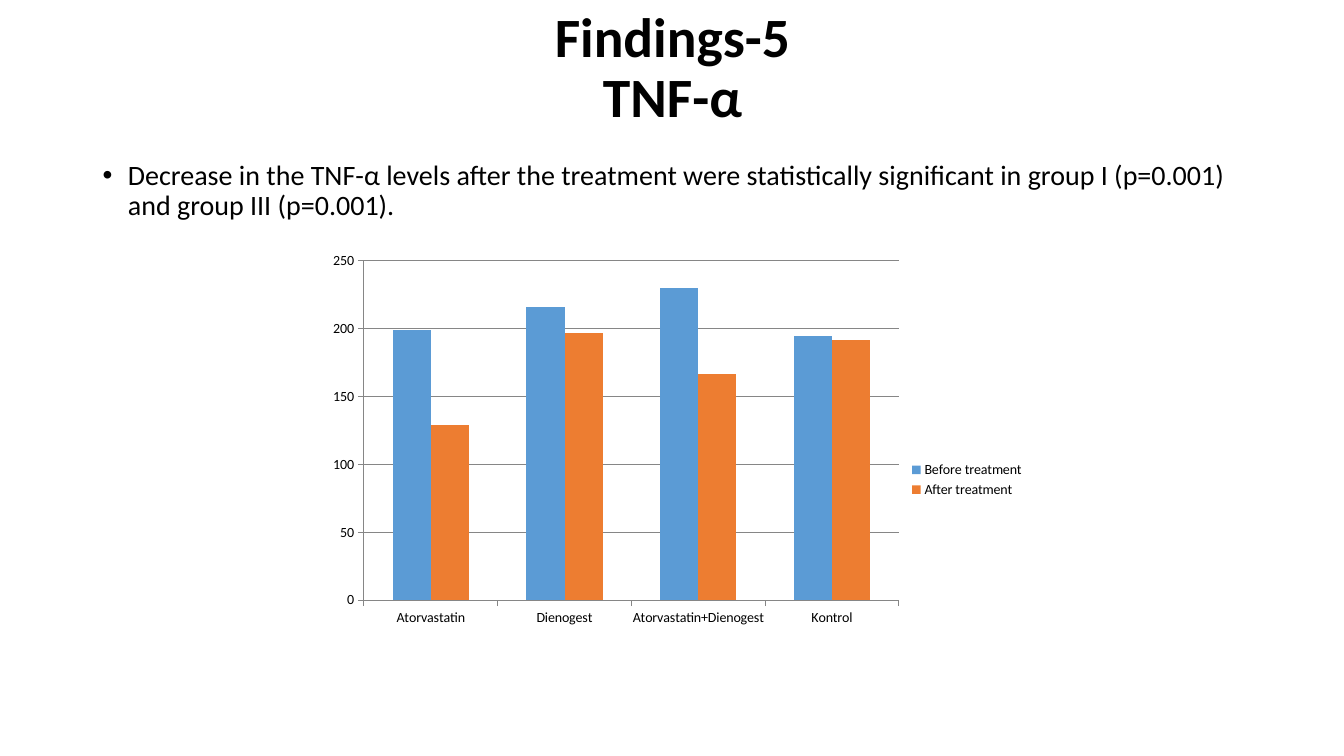
import pptx
import pptx.chart.data
import pptx.dml.color
import pptx.enum.chart
import pptx.enum.text
import pptx.oxml
import pptx.oxml.ns
import pptx.util
from pptx.util import Inches


def color(hex_string):
    return pptx.dml.color.RGBColor.from_string(hex_string)


class SlideBuilder:
    font_name = "Calibri"
    text_color = "000000"
    line_color = "868686"

    def __init__(self, presentation):
        self.slide = presentation.slides.add_slide(presentation.slide_layouts[5])

    def style_font(self, font, size, bold=False):
        font.name = self.font_name
        font.size = pptx.util.Pt(size)
        font.bold = bold
        font.color.rgb = color(self.text_color)

    def style_paragraph(self, paragraph, size, alignment, bold=False):
        paragraph.alignment = alignment
        paragraph.line_spacing = 0.9
        for run in paragraph.runs:
            self.style_font(run.font, size, bold)

    def title(self, text, left, top, width, height):
        shape = self.slide.shapes.title
        shape.left, shape.top = Inches(left), Inches(top)
        shape.width, shape.height = Inches(width), Inches(height)
        frame = shape.text_frame
        frame.text = text
        frame.auto_size = pptx.enum.text.MSO_AUTO_SIZE.NONE
        frame.vertical_anchor = pptx.enum.text.MSO_ANCHOR.MIDDLE
        self.style_paragraph(frame.paragraphs[0], 39.6, pptx.enum.text.PP_ALIGN.CENTER, True)

    def bullet_text(self, text, left, top, width, height):
        shape = self.slide.shapes.add_textbox(
            Inches(left), Inches(top), Inches(width), Inches(height))
        frame = shape.text_frame
        frame.word_wrap = True
        frame.text = text
        paragraph = frame.paragraphs[0]
        self.style_paragraph(paragraph, 20, pptx.enum.text.PP_ALIGN.LEFT)
        paragraph.space_before = pptx.util.Pt(10)
        properties = paragraph._p.get_or_add_pPr()
        properties.set("marL", str(Inches(0.25)))
        properties.set("indent", str(-Inches(0.25)))
        namespace = pptx.oxml.ns.nsdecls("a")
        properties.append(pptx.oxml.parse_xml(f'<a:buFont {namespace} typeface="Arial"/>'))
        properties.append(pptx.oxml.parse_xml(f'<a:buChar {namespace} char="•"/>'))

    def column_chart(self, categories, series_rows, left, top, width, height, plot_area):
        data = pptx.chart.data.CategoryChartData()
        data.categories = categories
        for name, values, _ in series_rows:
            data.add_series(name, values)
        chart = self.slide.shapes.add_chart(
            pptx.enum.chart.XL_CHART_TYPE.COLUMN_CLUSTERED,
            Inches(left), Inches(top), Inches(width), Inches(height), data).chart
        self.style_font(chart.font, 10)
        chart.has_title = False
        chart.has_legend = True
        chart.legend.position = pptx.enum.chart.XL_LEGEND_POSITION.RIGHT
        chart.legend.include_in_layout = False
        plot = chart.plots[0]
        plot.gap_width = 150
        plot.overlap = 0
        plot.vary_by_categories = False
        for series, (_, _, fill) in zip(plot.series, series_rows):
            series.format.fill.solid()
            series.format.fill.fore_color.rgb = color(fill)
        self.style_axes(chart)
        self.place_plot(chart, plot_area)

    def style_axes(self, chart):
        value_axis = chart.value_axis
        value_axis.minimum_scale = 0
        value_axis.maximum_scale = 250
        value_axis.major_unit = 50
        value_axis.has_major_gridlines = True
        for axis in (chart.category_axis, value_axis):
            axis.major_tick_mark = pptx.enum.chart.XL_TICK_MARK.OUTSIDE
            axis.minor_tick_mark = pptx.enum.chart.XL_TICK_MARK.NONE
        for item in (chart.category_axis, value_axis, value_axis.major_gridlines):
            item.format.line.color.rgb = color(self.line_color)
            item.format.line.width = pptx.util.Pt(0.75)

    def place_plot(self, chart, plot_area):
        area = chart._chartSpace.chart.plotArea
        for layout in area.findall(pptx.oxml.ns.qn("c:layout")):
            area.remove(layout)
        fractions = "".join(
            f'<c:{key} val="{value}"/>' for key, value in zip("xywh", plot_area))
        area.insert(0, pptx.oxml.parse_xml(
            f'<c:layout {pptx.oxml.ns.nsdecls("c")}><c:manualLayout>'
            '<c:layoutTarget val="inner"/><c:xMode val="edge"/><c:yMode val="edge"/>'
            f'{fractions}</c:manualLayout></c:layout>'))


def main():
    presentation = pptx.Presentation()
    presentation.slide_width = Inches(13.33)
    presentation.slide_height = Inches(7.5)
    builder = SlideBuilder(presentation)
    builder.title("Findings-5\vTNF-α", 0.92, 0.24, 11.5, 0.9)
    builder.bullet_text(
        "Decrease in the TNF-α levels after the treatment were statistically "
        "significant in group I (p=0.001) and group III (p=0.001).",
        0.92, 1.55, 11.5, 5.2)
    builder.column_chart(
        ["Atorvastatin", "Dienogest", "Atorvastatin+Dienogest", "Kontrol"],
        [("Before treatment", [199, 216, 230, 195], "5B9BD5"),
         ("After treatment", [129, 197, 167, 192], "ED7D31")],
        3.07, 2.38, 7.19, 4.76, (0.075, 0.044, 0.738, 0.707))
    presentation.save("out.pptx")


if __name__ == "__main__":
    main()
